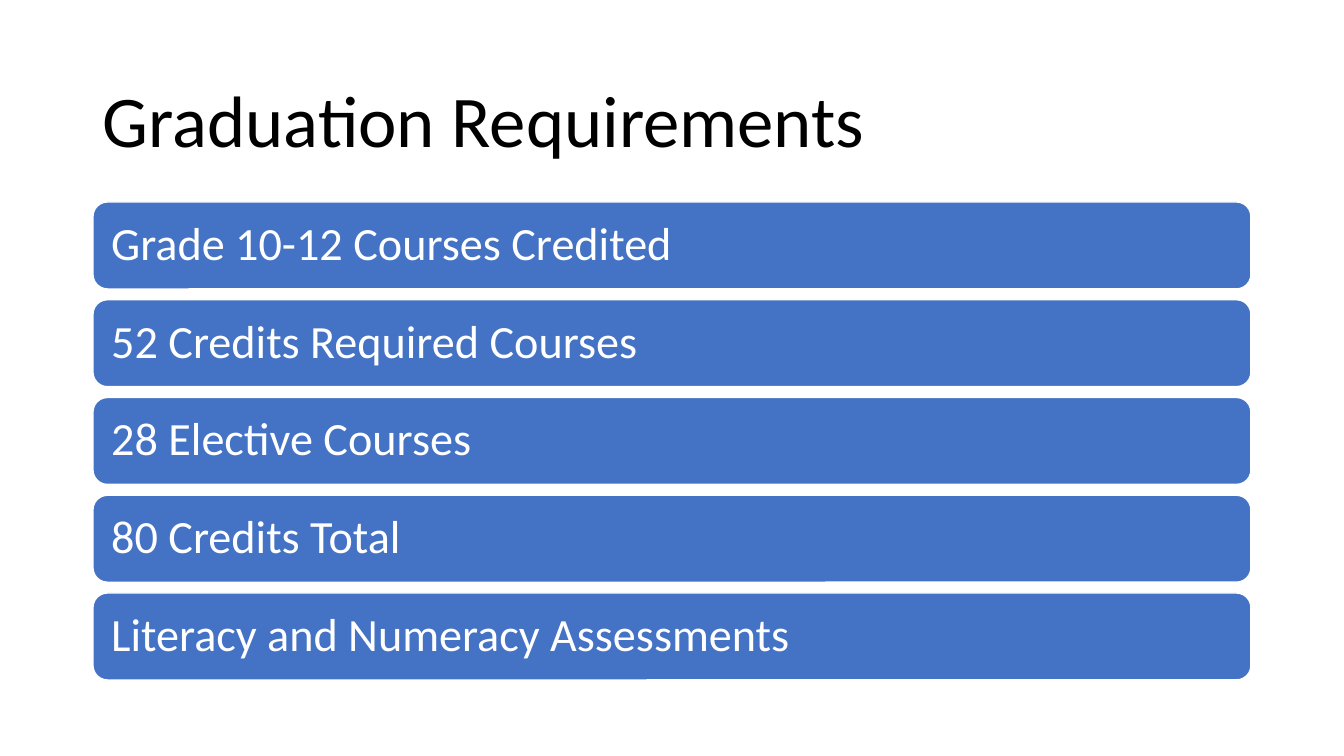
"""Builds the Graduation Requirements slide: a title over a stack of equal bars."""
from pptx import Presentation
from pptx.dml.color import RGBColor
from pptx.enum.shapes import MSO_SHAPE
from pptx.enum.text import MSO_ANCHOR, PP_ALIGN
from pptx.util import Pt

TITLE = "Graduation Requirements"
REQUIREMENTS = [
    "Grade 10-12 Courses Credited",
    "52 Credits Required Courses",
    "28 Elective Courses",
    "80 Credits Total",
    "Literacy and Numeracy Assessments",
]

ROUNDED = MSO_SHAPE.ROUNDED_RECTANGLE
MIDDLE = MSO_ANCHOR.MIDDLE
LEFT = PP_ALIGN.LEFT

FONT = "Calibri"
BLACK, WHITE, BLUE = "000000", "FFFFFF", "4472C4"

SLIDE_W, SLIDE_H = 1344, 756
MARGIN_X = 93
CONTENT_W = SLIDE_W - 2 * MARGIN_X
TITLE_TOP, TITLE_H = 61, 125
BARS_TOP, BARS_BOTTOM, BAR_H = 202, 680, 87
BAR_PITCH = (BARS_BOTTOM - BARS_TOP - BAR_H) / (len(REQUIREMENTS) - 1)
BAR_INSET = 14


def px(length):
    return round(length * 914400 / 100.8)


def color(hex_value):
    return RGBColor.from_string(hex_value)


def write(shape, text, size, text_color):
    frame = shape.text_frame
    frame.word_wrap = True
    frame.vertical_anchor = MIDDLE
    paragraph = frame.paragraphs[0]
    paragraph.text = text
    paragraph.alignment = LEFT
    paragraph.line_spacing = 0.9
    paragraph.font.name = FONT
    paragraph.font.size = Pt(size)
    paragraph.font.color.rgb = color(text_color)
    return frame


def add_bar(slide, text, top):
    bar = slide.shapes.add_shape(
        ROUNDED, px(MARGIN_X), px(top), px(CONTENT_W), px(BAR_H))
    bar.shadow.inherit = False
    bar.fill.solid()
    bar.fill.fore_color.rgb = color(BLUE)
    bar.line.color.rgb = color(WHITE)
    bar.line.width = Pt(1)
    frame = write(bar, text, 33, WHITE)
    frame.margin_left = frame.margin_right = px(BAR_INSET)


def main():
    deck = Presentation()
    deck.slide_width, deck.slide_height = px(SLIDE_W), px(SLIDE_H)
    slide = deck.slides.add_slide(deck.slide_layouts[6])
    title = slide.shapes.add_textbox(
        px(MARGIN_X), px(TITLE_TOP), px(CONTENT_W), px(TITLE_H))
    write(title, TITLE, 52, BLACK)
    for row, requirement in enumerate(REQUIREMENTS):
        add_bar(slide, requirement, BARS_TOP + row * BAR_PITCH)
    deck.save("out.pptx")


if __name__ == "__main__":
    main()
